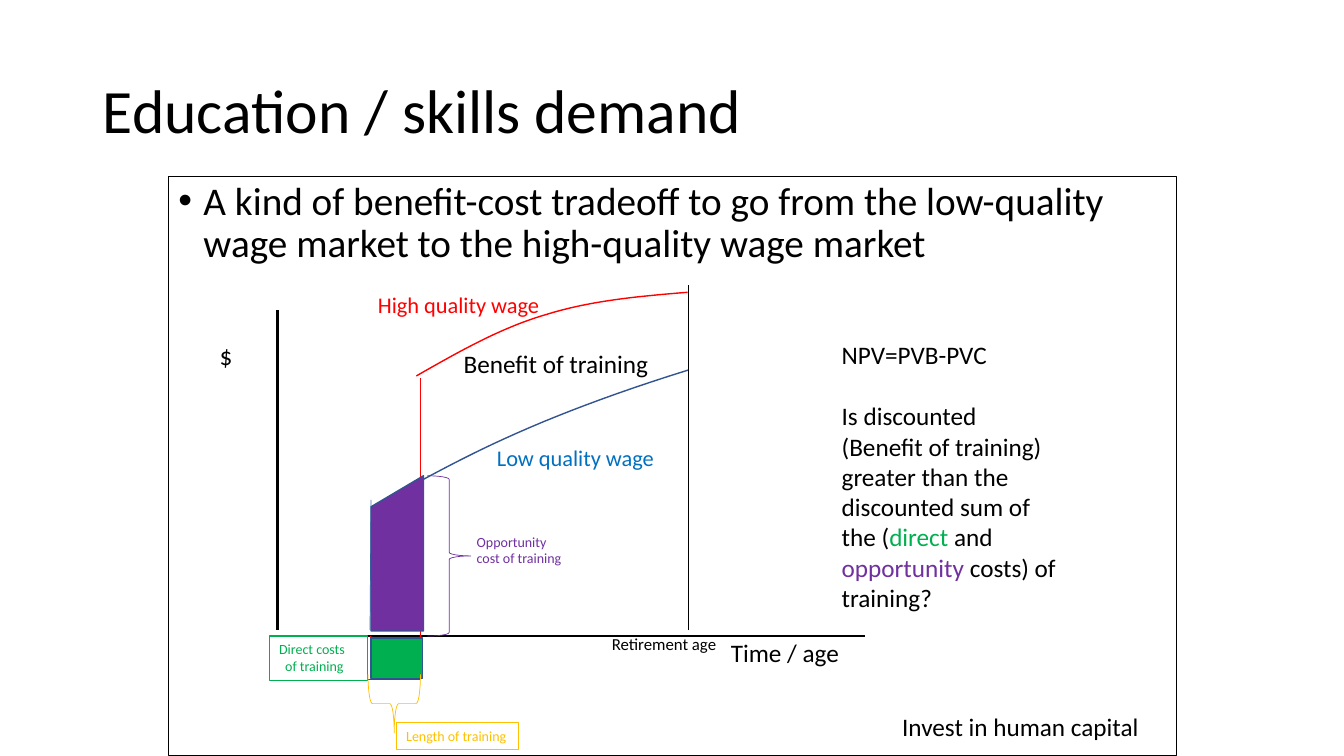
from lxml import etree
from pptx import Presentation
from pptx.dml.color import RGBColor
from pptx.enum.shapes import MSO_CONNECTOR, MSO_SHAPE
from pptx.enum.text import MSO_ANCHOR, MSO_AUTO_SIZE, PP_ALIGN
from pptx.oxml.ns import qn
from pptx.util import Inches, Pt

STRAIGHT = MSO_CONNECTOR.STRAIGHT
RECTANGLE = MSO_SHAPE.RECTANGLE
MANUAL_INPUT = MSO_SHAPE.FLOWCHART_MANUAL_INPUT
LEFT_BRACE = MSO_SHAPE.LEFT_BRACE
RIGHT_BRACE = MSO_SHAPE.RIGHT_BRACE
LEFT = PP_ALIGN.LEFT
TOP = MSO_ANCHOR.TOP
MIDDLE = MSO_ANCHOR.MIDDLE
GROW = MSO_AUTO_SIZE.SHAPE_TO_FIT_TEXT
FIXED = MSO_AUTO_SIZE.NONE

FONT = "Calibri"
COLORS = {
    "black": "000000",
    "red": "FF0000",
    "blue": "0070C0",
    "axis_blue": "4472C4",
    "navy": "325491",
    "green": "00B050",
    "purple": "7030A0",
    "gold": "FFC000",
}
CURVE_STEPS = 24


def rgb(name):
    """Return the named colour."""
    return RGBColor.from_string(COLORS[name])


def style_font(font, size, color):
    """Set typeface, size and colour of a font."""
    font.name = FONT
    font.size = Pt(size)
    font.color.rgb = rgb(color)


def write_text(shape, paragraphs, size, color="black", wrap=True, auto_size=GROW):
    """Fill a shape with left-aligned paragraphs in one style."""
    frame = shape.text_frame
    frame.word_wrap = wrap
    frame.auto_size = auto_size
    frame.vertical_anchor = TOP
    for index, text in enumerate(paragraphs):
        paragraph = frame.paragraphs[0] if index == 0 else frame.add_paragraph()
        paragraph.text = text
        paragraph.alignment = LEFT
        style_font(paragraph.font, size, color)
    return frame


def add_label(slide, box, text, size, color="black", wrap=True):
    """Add a text box with a single paragraph."""
    shape = slide.shapes.add_textbox(*map(Inches, box))
    write_text(shape, [text], size, color, wrap)


def add_outlined(slide, kind, box, line, width, fill=None):
    """Add a preset shape with an outline and an optional fill."""
    shape = slide.shapes.add_shape(kind, *map(Inches, box))
    shape.shadow.inherit = False
    shape.line.color.rgb = rgb(line)
    shape.line.width = Pt(width)
    if fill:
        shape.fill.solid()
        shape.fill.fore_color.rgb = rgb(fill)
    else:
        shape.fill.background()
    return shape


def add_line(slide, start, end, color, width):
    """Add a straight line without a shadow."""
    connector = slide.shapes.add_connector(STRAIGHT, *map(Inches, start + end))
    connector.line.color.rgb = rgb(color)
    connector.line.width = Pt(width)
    etree.SubElement(connector._element.spPr, qn("a:effectLst"))


def bezier_point(controls, t):
    """Return the point at t on a cubic curve."""
    weights = ((1 - t) ** 3, 3 * t * (1 - t) ** 2, 3 * t**2 * (1 - t), t**3)
    return tuple(
        Inches(sum(weight * point[axis] for weight, point in zip(weights, controls)))
        for axis in (0, 1)
    )


def add_curve(slide, points, color):
    """Draw a smooth open curve through chained cubic segments."""
    outline = [
        bezier_point(points[first:first + 4], step / CURVE_STEPS)
        for first in range(0, len(points) - 1, 3)
        for step in range(CURVE_STEPS + 1)
    ]
    builder = slide.shapes.build_freeform(*outline[0])
    builder.add_line_segments(outline[1:], close=False)
    curve = builder.convert_to_shape()
    curve.shadow.inherit = False
    curve.fill.background()
    curve.line.color.rgb = rgb(color)
    curve.line.width = Pt(1)


def set_indent(paragraph, margin, indent=0):
    """Set the left margin and first-line indent of a paragraph."""
    properties = paragraph._p.get_or_add_pPr()
    properties.set("marL", str(Inches(margin)))
    properties.set("indent", str(Inches(indent)))
    return properties


def add_title(slide, text):
    """Place and format the title."""
    title = slide.shapes.title
    title.left, title.top, title.width, title.height = map(
        Inches, (0.92, 0.4, 11.5, 1.45)
    )
    frame = write_text(title, [text], 44, auto_size=FIXED)
    frame.vertical_anchor = MIDDLE
    frame.paragraphs[0].line_spacing = 0.9


def add_statement(slide, text):
    """Add the framed bullet statement."""
    panel = add_outlined(slide, RECTANGLE, (1.67, 1.75, 10, 5.75), "black", 0.75)
    paragraph = write_text(panel, [text], 28, auto_size=FIXED).paragraphs[0]
    paragraph.line_spacing = 0.9
    paragraph.space_before = Pt(10)
    properties = set_indent(paragraph, 0.25, -0.25)
    bullet_font = etree.Element(qn("a:buFont"), typeface="Arial")
    bullet = etree.Element(qn("a:buChar"), char="•")
    properties.find(qn("a:spcBef")).addnext(bullet_font)
    bullet_font.addnext(bullet)


def add_wage_chart(slide):
    """Draw the axes, wage curves and guide lines."""
    add_line(slide, (2.75, 3.08), (2.75, 6.25), "black", 2)
    add_line(slide, (2.75, 6.31), (8.58, 6.31), "black", 2)
    add_label(slide, (7.15, 6.27, 1.29, 0.4), "Time / age", 18, wrap=False)
    add_line(slide, (3.67, 6.25), (3.68, 4.96), "axis_blue", 0.5)
    low_wage = [(3.83, 4.96), (4.55, 4.56), (5.26, 4.16), (6.83, 3.67)]
    add_curve(slide, low_wage, "navy")
    for start, end in (
        ((3.67, 6.31), (3.67, 6.71)),
        ((4.17, 6.74), (4.17, 6.28)),
        ((3.65, 6.74), (4.17, 6.74)),
        ((4.17, 3.75), (4.17, 6.31)),
    ):
        add_line(slide, start, end, "red", 0.5)
    high_wage = [(4.13, 3.73), (4.55, 3.49), (4.97, 3.25), (5.42, 3.12),
                 (5.87, 2.98), (6.34, 2.94), (6.82, 2.9)]
    add_curve(slide, high_wage, "red")
    add_line(slide, (6.83, 6.25), (6.83, 2.83), "black", 0.5)
    add_label(slide, (2.08, 3.33, 0.34, 0.4), "$", 18, wrap=False)
    add_label(slide, (3.65, 2.84, 2.19, 0.37), "High quality wage", 16, "red")
    add_label(slide, (4.83, 4.36, 1.99, 0.37), "Low quality wage", 16, "blue")
    add_label(slide, (5.97, 6.24, 2, 0.3), "Retirement age", 12)


def add_training_costs(slide):
    """Draw the cost areas with their braces and labels."""
    direct = add_outlined(slide, RECTANGLE, (2.67, 6.31, 0.98, 0.44), "green", 0.75)
    frame = write_text(direct, ["Direct costs", "of training"], 10, "green")
    set_indent(frame.paragraphs[1], 0.06)
    add_outlined(slide, RECTANGLE, (3.68, 6.33, 0.51, 0.4), "navy", 1, "green")
    add_outlined(slide, MANUAL_INPUT, (3.68, 4.72, 0.52, 1.54), "navy", 1, "purple")
    add_outlined(slide, RIGHT_BRACE, (4.24, 4.72, 0.43, 1.59), "purple", 0.5)
    add_label(slide, (4.63, 5.24, 1.12, 0.44), "Opportunity cost of training", 10, "purple")
    add_label(slide, (4.5, 3.41, 2.06, 0.4), "Benefit of training", 18, wrap=False)
    length_brace = add_outlined(slide, LEFT_BRACE, (3.62, 6.72, 0.58, 0.52), "gold", 0.5)
    length_brace.rotation = 270
    length = add_outlined(slide, RECTANGLE, (3.93, 7.17, 1.21, 0.27), "gold", 0.75)
    write_text(length, ["Length of training"], 10, "gold", wrap=False)


def add_decision_rule(slide):
    """Add the net present value question."""
    shape = slide.shapes.add_textbox(*map(Inches, (8.25, 3.32, 2.33, 2.83)))
    frame = write_text(shape, ["NPV=PVB-PVC", ""], 18)
    formula, question = frame.paragraphs
    formula.space_after = Pt(22)
    for text, color in (
        ("Is discounted (Benefit of training) greater than the discounted sum of the (", "black"),
        ("direct", "green"),
        (" and ", "black"),
        ("opportunity ", "purple"),
        ("costs) of training?", "black"),
    ):
        run = question.add_run()
        run.text = text
        style_font(run.font, 18, color)


def main():
    """Build and save the slide."""
    presentation = Presentation()
    presentation.slide_width = Inches(13.33)
    presentation.slide_height = Inches(7.5)
    slide = presentation.slides.add_slide(presentation.slide_layouts[5])
    add_title(slide, "Education / skills demand")
    add_statement(slide, "A kind of benefit-cost tradeoff to go from the low-quality "
                         "wage market to the high-quality wage market")
    add_wage_chart(slide)
    add_training_costs(slide)
    add_decision_rule(slide)
    add_label(slide, (8.85, 7.01, 2.57, 0.4), "Invest in human capital", 18, wrap=False)
    presentation.save("out.pptx")


if __name__ == "__main__":
    main()
